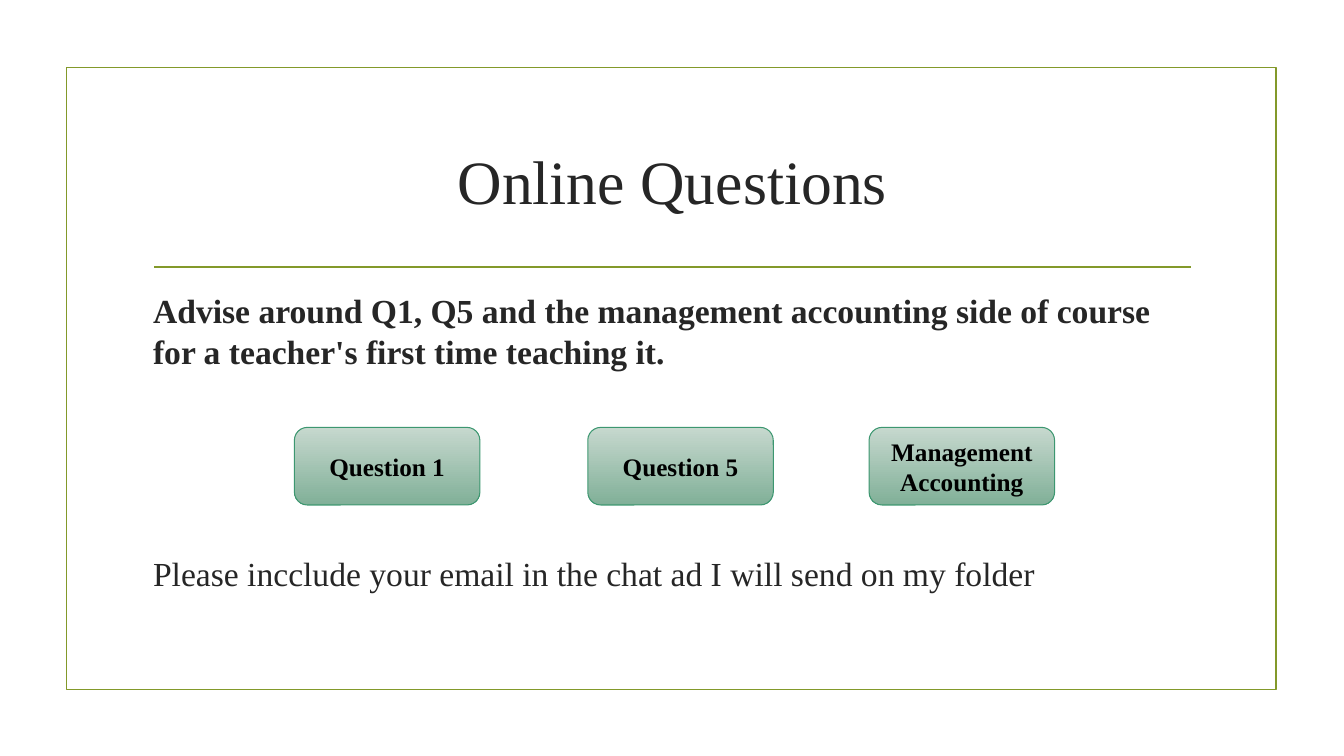
import pptx
import pptx.dml.color
import pptx.enum.shapes
import pptx.enum.text
import pptx.util
from pptx.util import Inches
from lxml import etree

FONT = "Times New Roman"
COLORS = {
    "olive": "83992A",
    "text": "262626",
    "black": "000000",
    "button_top": "C6D8CE",
    "button_bottom": "81B098",
    "button_line": "3C9770",
}
SHAPES = pptx.enum.shapes.MSO_SHAPE
ALIGN = pptx.enum.text.PP_ALIGN
ANCHOR = pptx.enum.text.MSO_ANCHOR

# text, box (left, top, width, height), size, bold, alignment, anchor
TEXTS = [
    ("Online Questions", (1.42, 1.07, 10.5, 1.43), 44, False,
     ALIGN.CENTER, ANCHOR.MIDDLE),
    ("Advise around Q1, Q5 and the management accounting side of course "
     "for a teacher's first time teaching it.",
     (1.42, 2.83, 10.5, 0.9), 24, True, ALIGN.LEFT, ANCHOR.TOP),
    ("Please incclude your email in the chat ad I will send on my folder",
     (1.42, 5.44, 10.5, 0.5), 24, False, ALIGN.LEFT, ANCHOR.TOP),
]
BUTTONS = [("Question 1", 2.92), ("Question 5", 5.83), ("Management Accounting", 8.62)]
BUTTON_TOP, BUTTON_WIDTH, BUTTON_HEIGHT = 4.24, 1.84, 0.77
FRAME = (0.66, 0.67, 12, 6.17)
RULE = (1.53, 2.65, 11.81, 2.65)


def rgb(name):
    return pptx.dml.color.RGBColor.from_string(COLORS[name])


def set_line(shape, color, width):
    shape.line.color.rgb = rgb(color)
    shape.line.width = pptx.util.Pt(width)


def write(shape, text, size, bold, color, align, anchor):
    tf = shape.text_frame
    tf.word_wrap = True
    tf.vertical_anchor = anchor
    tf.text = text
    p = tf.paragraphs[0]
    p.alignment = align
    font = p.runs[0].font
    font.name = FONT
    font.size = pptx.util.Pt(size)
    font.bold = bold
    font.color.rgb = rgb(color)


def add_frame(slide):
    frame = slide.shapes.add_shape(SHAPES.RECTANGLE, *map(Inches, FRAME))
    frame.shadow.inherit = False
    frame.fill.background()
    set_line(frame, "olive", 1.25)


def add_rule(slide):
    rule = slide.shapes.add_connector(
        pptx.enum.shapes.MSO_CONNECTOR.STRAIGHT, *map(Inches, RULE))
    set_line(rule, "olive", 1.25)
    etree.SubElement(rule._element.spPr, pptx.oxml.ns.qn("a:effectLst"))


def add_button(slide, label, left):
    box = (left, BUTTON_TOP, BUTTON_WIDTH, BUTTON_HEIGHT)
    sp = slide.shapes.add_shape(SHAPES.ROUNDED_RECTANGLE, *map(Inches, box))
    sp.shadow.inherit = False
    sp.fill.gradient()
    sp.fill.gradient_angle = 270
    for stop, position, color in zip(sp.fill.gradient_stops, (0, 1),
                                     ("button_top", "button_bottom")):
        stop.position = position
        stop.color.rgb = rgb(color)
    set_line(sp, "button_line", 0.75)
    write(sp, label, 18, True, "black", ALIGN.CENTER, ANCHOR.MIDDLE)


def main():
    prs = pptx.Presentation()
    prs.slide_width, prs.slide_height = Inches(13.33), Inches(7.5)
    slide = prs.slides.add_slide(prs.slide_layouts[6])
    add_frame(slide)
    add_rule(slide)
    for text, box, size, bold, align, anchor in TEXTS:
        tb = slide.shapes.add_textbox(*map(Inches, box))
        write(tb, text, size, bold, "text", align, anchor)
    for label, left in BUTTONS:
        add_button(slide, label, left)
    prs.save("out.pptx")


if __name__ == "__main__":
    main()
